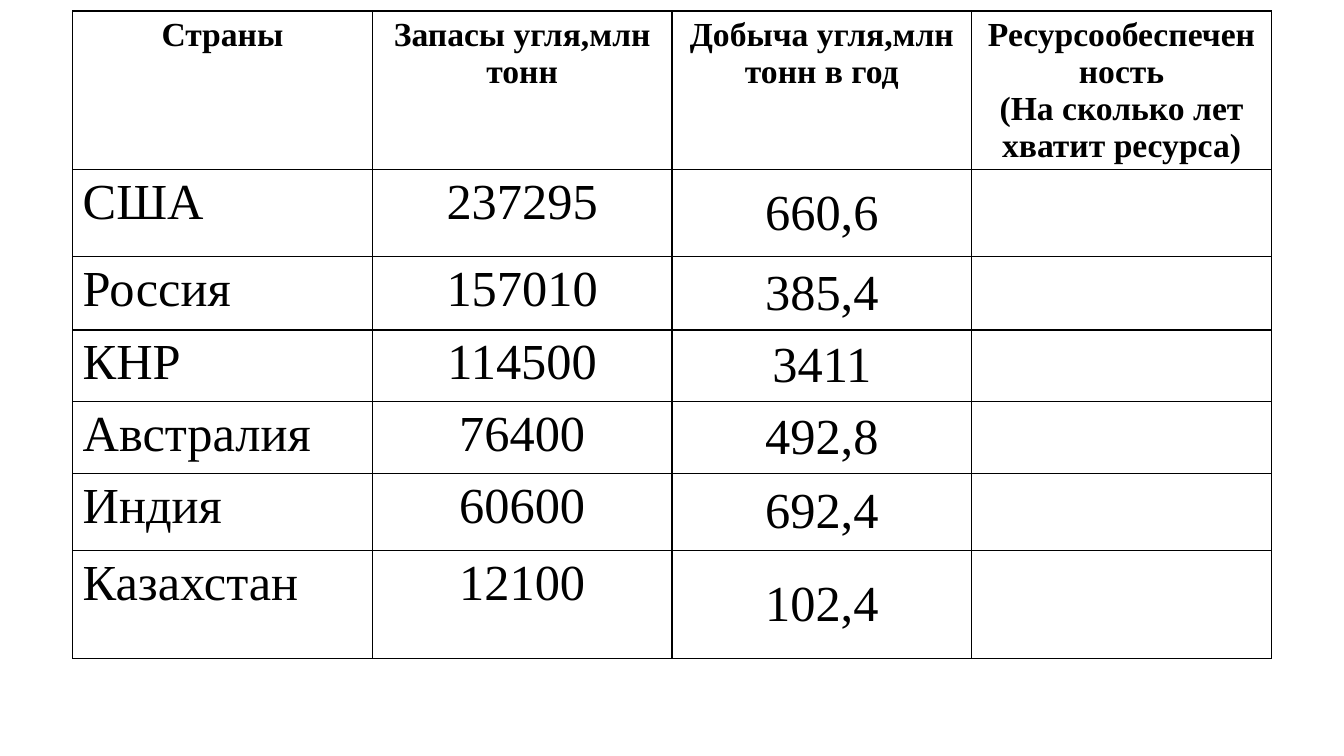
from lxml.etree import SubElement
from pptx import Presentation
from pptx.dml.color import RGBColor
from pptx.enum.text import MSO_ANCHOR, PP_ALIGN
from pptx.oxml.ns import qn
from pptx.util import Inches, Pt

COLORS = {"ink": "000000"}
FONT = "Times New Roman"
ROWS = [
    ("Страны", "Запасы угля,млн тонн", "Добыча угля,млн тонн в год",
     "Ресурсообеспеченность\n(На сколько лет хватит ресурса)"),
    ("США", "237295", "660,6", ""),
    ("Россия", "157010", "385,4", ""),
    ("КНР", "114500", "3411", ""),
    ("Австралия", "76400", "492,8", ""),
    ("Индия", "60600", "692,4", ""),
    ("Казахстан", "12100", "102,4", ""),
]
HEIGHTS = [1.57, 0.86, 0.73, 0.71, 0.71, 0.77, 1.07]
WIDTH = 11.89


def add_text(cell, text, size, bold, align):
    for i, line in enumerate(text.split("\n")):
        frame = cell.text_frame
        para = frame.add_paragraph() if i else frame.paragraphs[0]
        para.alignment = align
        if line:
            run = para.add_run()
            run.text = line
            font = run.font
            font.name = FONT
            font.size = Pt(size)
            font.bold = bold
            font.color.rgb = RGBColor.from_string(COLORS["ink"])


def add_border(cell):
    props = cell._tc.get_or_add_tcPr()
    for i, side in enumerate(("lnL", "lnR", "lnT", "lnB")):
        line = props.makeelement(qn(f"a:{side}"), {"w": str(Pt(1))})
        props.insert(i, line)
        fill = SubElement(line, qn("a:solidFill"))
        SubElement(fill, qn("a:srgbClr"), val=COLORS["ink"])


prs = Presentation()
prs.slide_width = Inches(13.33)
prs.slide_height = Inches(7.5)
slide = prs.slides.add_slide(prs.slide_layouts[6])

table = slide.shapes.add_table(
    len(ROWS), len(ROWS[0]), Inches(0.72), Inches(0.11),
    Inches(WIDTH), Inches(sum(HEIGHTS))).table
table.first_row = False
table.horz_banding = False
for col in table.columns:
    col.width = Inches(WIDTH / len(ROWS[0]))

for r, (row, height) in enumerate(zip(ROWS, HEIGHTS)):
    table.rows[r].height = Inches(height)
    head = r == 0
    for c, text in enumerate(row):
        cell = table.cell(r, c)
        cell.fill.background()
        add_border(cell)
        align = PP_ALIGN.CENTER if head or c else PP_ALIGN.LEFT
        add_text(cell, text, 24 if head else 36, head, align)
        if c == 2 and not head:
            cell.vertical_anchor = MSO_ANCHOR.MIDDLE

prs.save("out.pptx")
